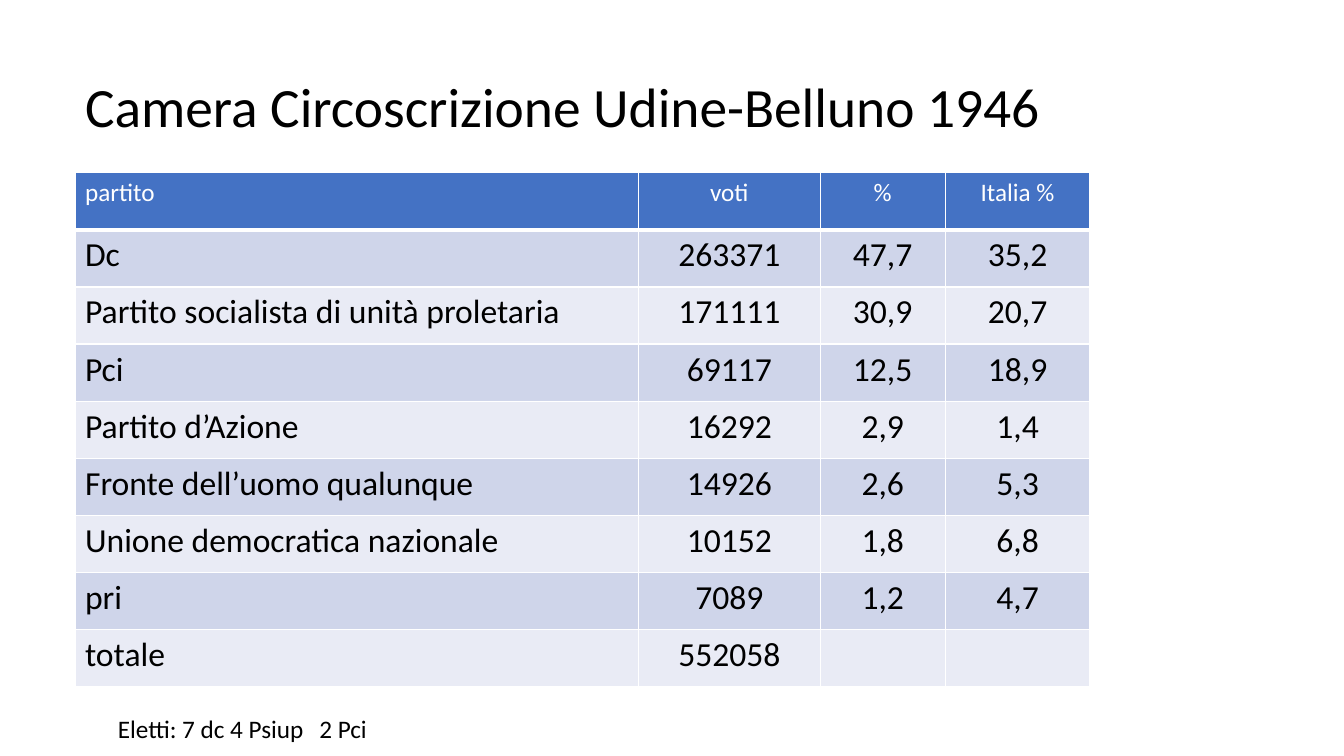
from lxml.etree import SubElement
from pptx import Presentation
from pptx.dml.color import RGBColor
from pptx.enum.text import MSO_ANCHOR as Anchor, MSO_AUTO_SIZE as AutoSize, PP_ALIGN as Align
from pptx.oxml.ns import qn
from pptx.util import Cm, Pt

FONT = "Calibri"
BLACK, WHITE = "000000", "FFFFFF"
HEADER_FILL = "4472C4"
BAND_FILLS = ("E9EBF5", "CFD5EA")
COLUMN_WIDTHS = (14.2, 4.58, 3.15, 3.65)
RESULTS = (
    ("partito", "voti", "%", "Italia %"),
    ("Dc", "263371", "47,7", "35,2"),
    ("Partito socialista di unità proletaria", "171111", "30,9", "20,7"),
    ("Pci", "69117", "12,5", "18,9"),
    ("Partito d’Azione", "16292", "2,9", "1,4"),
    ("Fronte dell’uomo qualunque", "14926", "2,6", "5,3"),
    ("Unione democratica nazionale", "10152", "1,8", "6,8"),
    ("pri", "7089", "1,2", "4,7"),
    ("totale", "552058", "", ""),
)


def color(value):
    return RGBColor.from_string(value)


def write(paragraph, text, size, text_color=BLACK, align=Align.LEFT):
    paragraph.text = text
    paragraph.alignment = align
    font = paragraph.font
    font.name, font.size, font.bold = FONT, Pt(size), False
    font.color.rgb = color(text_color)


def place(shape, left, top, width, height):
    shape.left, shape.top = Cm(left), Cm(top)
    shape.width, shape.height = Cm(width), Cm(height)


def add_title(slide, text, box):
    title = slide.shapes.title
    place(title, *box)
    frame = title.text_frame
    frame.word_wrap = True
    frame.auto_size = AutoSize.NONE
    frame.vertical_anchor = Anchor.TOP
    frame.margin_top = Cm(0.3)
    write(frame.paragraphs[0], text, 39.6)
    frame.paragraphs[0].line_spacing = 0.9


def add_borders(cell, bottom_width):
    properties = cell._tc.get_or_add_tcPr()
    widths = {"a:lnL": 1, "a:lnR": 1, "a:lnT": 1, "a:lnB": bottom_width}
    for index, (tag, width) in enumerate(widths.items()):
        line = SubElement(properties, qn(tag), w=str(Pt(width)))
        fill = SubElement(line, qn("a:solidFill"))
        SubElement(fill, qn("a:srgbClr"), val=WHITE)
        properties.insert(index, line)


def add_results(slide, rows, box):
    left, top, width, height = map(Cm, box)
    frame = slide.shapes.add_table(len(rows), len(COLUMN_WIDTHS), left, top, width, height)
    table = frame.table
    table.first_row = table.horz_banding = False
    for column, column_width in zip(table.columns, COLUMN_WIDTHS):
        column.width = Cm(column_width)
    for row_index, row in enumerate(rows):
        is_header = row_index == 0
        for column_index, text in enumerate(row):
            cell = table.cell(row_index, column_index)
            cell.fill.solid()
            cell.fill.fore_color.rgb = color(HEADER_FILL if is_header else BAND_FILLS[row_index % 2])
            add_borders(cell, 3 if is_header else 1)
            write(
                cell.text_frame.paragraphs[0],
                text,
                18 if is_header else 24,
                WHITE if is_header else BLACK,
                Align.CENTER if column_index else Align.LEFT,
            )


def add_elected(slide, text, box):
    frame = slide.shapes.add_textbox(*map(Cm, box)).text_frame
    frame.word_wrap = True
    frame.auto_size = AutoSize.SHAPE_TO_FIT_TEXT
    write(frame.paragraphs[0], text, 18)


def main():
    presentation = Presentation()
    presentation.slide_width, presentation.slide_height = Cm(33.87), Cm(19.05)
    slide = presentation.slides.add_slide(presentation.slide_layouts[5])
    add_title(slide, "Camera Circoscrizione Udine-Belluno 1946", (1.89, 1.7, 26.62, 3.66))
    add_results(slide, RESULTS, (1.89, 4.35, sum(COLUMN_WIDTHS), 12.96))
    add_elected(slide, "Eletti: 7 dc 4 Psiup\t2 Pci", (2.72, 17.86, 18.82, 1.02))
    presentation.save("out.pptx")


if __name__ == "__main__":
    main()
